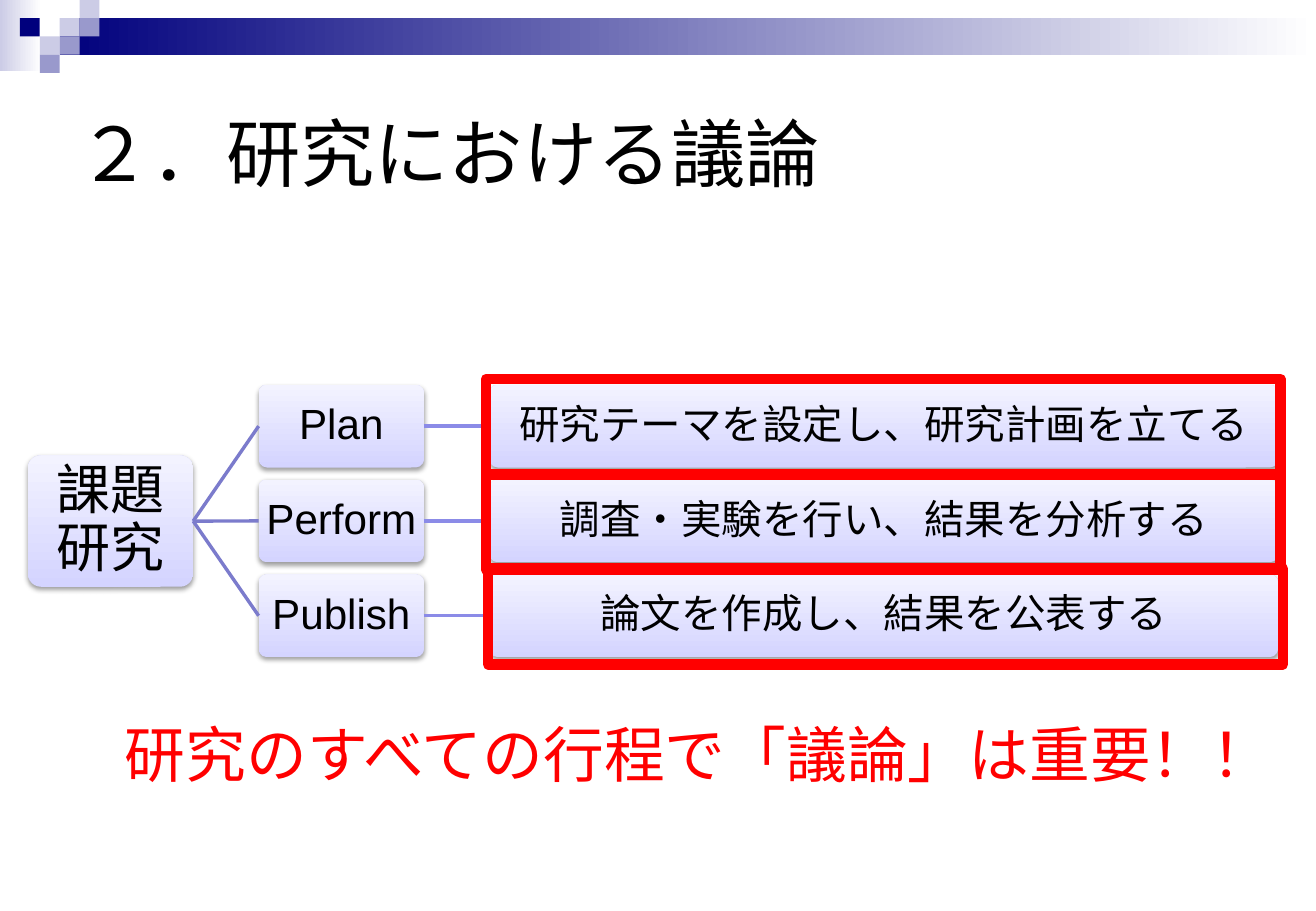
from lxml.etree import SubElement
from pptx import Presentation
from pptx.dml.color import RGBColor
from pptx.enum.shapes import MSO_CONNECTOR as Connector, MSO_SHAPE as Shape
from pptx.enum.text import MSO_ANCHOR as Anchor, PP_ALIGN as Align
from pptx.oxml.ns import qn
from pptx.util import Pt

TITLE = "２．研究における議論"
ROOT = "課題研究"
STEPS = [
    ("Plan", "研究テーマを設定し、研究計画を立てる"),
    ("Perform", "調査・実験を行い、結果を分析する"),
    ("Publish", "論文を作成し、結果を公表する"),
]
MESSAGE = "研究のすべての行程で「議論」は重要！！"
COLORS = {
    "navy": "00007D", "mid": "9999CC", "pale": "CCCCE6", "white": "FFFFFF",
    "box_bottom": "D4D4FF", "box_top": "F3F3FF", "black": "000000",
    "red": "FF0000", "branch": "7B7BCC", "link": "8B8BE7",
}
SQUARES = [
    (3, 1, "pale"), (4, 0, "pale"), (4, 1, "mid"), (2, 2, "pale"),
    (1, 1, "navy"), (3, 2, "mid"), (2, 3, "mid"),
]
CELL_W, CELL_H = 11.8, 10.8
ROW_TOP, ROW_STEP, BOX_H = 228.1, 56.2, 49
STEP_X, STEP_W = 153.3, 98
TASK_X, TASK_W = 290.1, 467.4
FRAME_TOP, FRAME_W, FRAME_H = 224.6, 471, 56.9
FRAME_LEFTS = [288, 288, 289.4]


def rgb(name):
    return RGBColor.from_string(COLORS[name])


def write(box, text, size, color="black", align=Align.LEFT, anchor=Anchor.TOP,
          inset=None, spacing=None):
    frame = box.text_frame
    frame.word_wrap = True
    frame.vertical_anchor = anchor
    if inset is not None:
        frame.margin_left = frame.margin_right = Pt(inset)
        frame.margin_top = frame.margin_bottom = Pt(inset)
    para = frame.paragraphs[0]
    para.alignment = align
    if spacing:
        para.line_spacing = spacing
    span = para.add_run()
    span.text = text
    span.font.name = "Arial"
    span.font.size = Pt(size)
    span.font.color.rgb = rgb(color)


def add_box(page, kind, left, top, width, height, colors, angle=0):
    box = page.shapes.add_shape(kind, Pt(left), Pt(top), Pt(width), Pt(height))
    box.shadow.inherit = False
    box.line.fill.background()
    if len(colors) == 2:
        box.fill.gradient()
        box.fill.gradient_angle = angle
        for stop, name in zip(box.fill.gradient_stops, colors):
            stop.color.rgb = rgb(name)
    elif colors:
        box.fill.solid()
        box.fill.fore_color.rgb = rgb(colors[0])
    else:
        box.fill.background()
    return box


def add_node(page, text, size, left, top, width, height):
    node = add_box(page, Shape.ROUNDED_RECTANGLE, left, top, width, height,
                   ["box_bottom", "box_top"], angle=90)
    node.adjustments[0] = 0.1
    effects = node._element.spPr.find(qn("a:effectLst"))
    shadow = SubElement(effects, qn("a:outerShdw"), blurRad=str(Pt(3.1)),
                        dist=str(Pt(1.6)), dir="5400000", rotWithShape="0")
    color = SubElement(shadow, qn("a:srgbClr"), val=COLORS["black"])
    SubElement(color, qn("a:alpha"), val="38000")
    write(node, text, size, align=Align.CENTER, anchor=Anchor.MIDDLE,
          inset=3, spacing=0.9)
    return node


def join(page, start, end, color):
    line = page.shapes.add_connector(Connector.STRAIGHT, 0, 0, 0, 0)
    line.begin_connect(start, 3)
    line.end_connect(end, 1)
    line.line.color.rgb = rgb(color)
    line.line.width = Pt(2)
    SubElement(line._element.spPr, qn("a:effectLst"))


def add_text(page, text, size, left, top, width, height, **style):
    box = page.shapes.add_textbox(Pt(left), Pt(top), Pt(width), Pt(height))
    write(box, text, size, **style)


def main():
    deck = Presentation()
    deck.slide_width, deck.slide_height = Pt(780), Pt(540)
    page = deck.slides.add_slide(deck.slide_layouts[6])

    add_box(page, Shape.RECTANGLE, 0, 0, 24.5, 42, ["pale", "white"])
    add_box(page, Shape.RECTANGLE, 3 * CELL_W, CELL_H, 780 - 3 * CELL_W,
            2 * CELL_H, ["navy", "white"])
    for column, row, color in SQUARES:
        add_box(page, Shape.RECTANGLE, column * CELL_W, row * CELL_H,
                CELL_W, CELL_H, [color])
    add_text(page, TITLE, 44, 39, 36, 702, 108, anchor=Anchor.MIDDLE)

    root = add_node(page, ROOT, 32, 16.5, 270, 98, 77.8)
    for index, (step, task) in enumerate(STEPS):
        top = ROW_TOP + index * ROW_STEP
        step_box = add_node(page, step, 25, STEP_X, top, STEP_W, BOX_H)
        task_box = add_node(page, task, 24, TASK_X, top, TASK_W, BOX_H)
        join(page, root, step_box, "branch")
        join(page, step_box, task_box, "link")

    for index, left in enumerate(FRAME_LEFTS):
        frame = add_box(page, Shape.RECTANGLE, left, FRAME_TOP + index * ROW_STEP,
                        FRAME_W, FRAME_H, [])
        frame.line.color.rgb = rgb("red")
        frame.line.width = Pt(6)
    add_text(page, MESSAGE, 36, 67, 421.2, 681.8, 51, color="red")

    deck.save("out.pptx")


if __name__ == "__main__":
    main()
